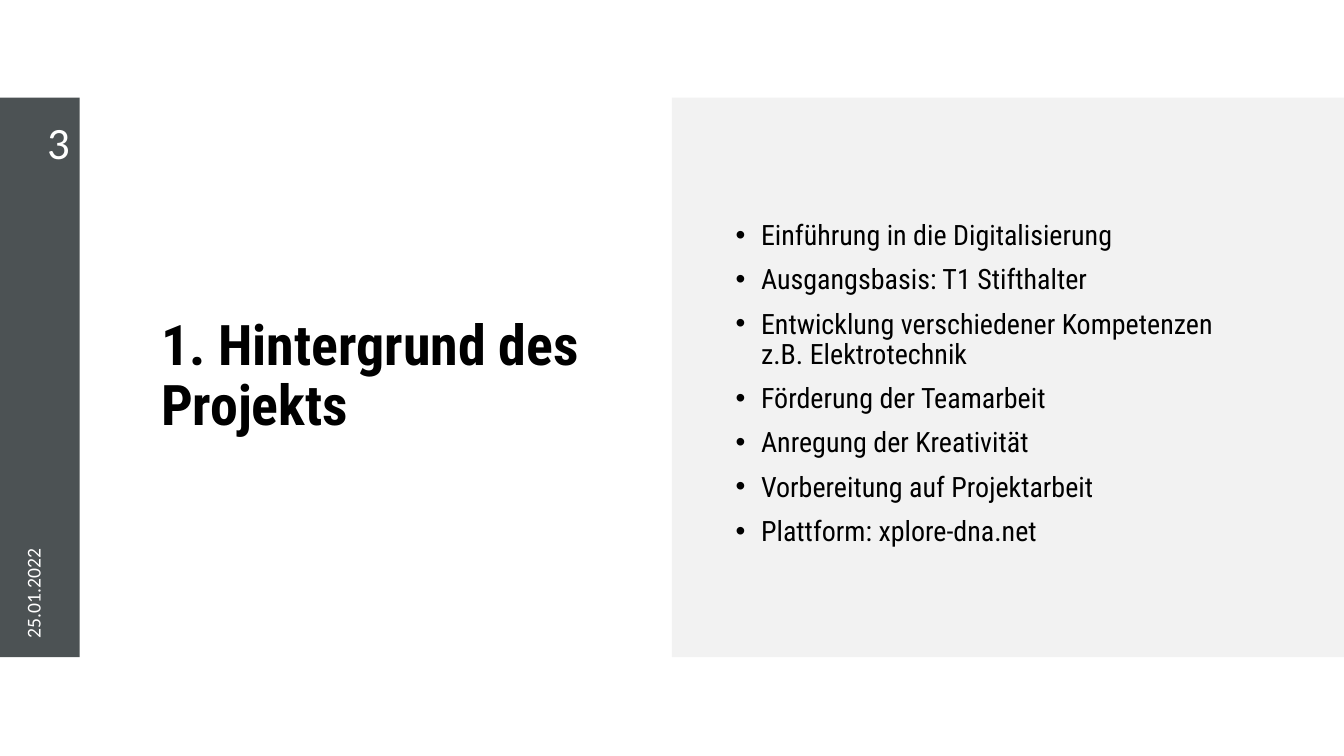
from lxml.etree import SubElement
from pptx import Presentation
from pptx.dml.color import RGBColor
from pptx.enum.shapes import MSO_SHAPE
from pptx.enum.text import MSO_ANCHOR, PP_ALIGN
from pptx.oxml.ns import qn
from pptx.util import Cm, Pt

CONDENSED = "Roboto Condensed"
BAND_TOP, BAND_HEIGHT = 2.46, 14.1
SIDEBAR_WIDTH = 2.01


def color(hex_string):
    return RGBColor.from_string(hex_string)


def add_text(lines, left, top, width, height, size, font="Calibri", fill="FFFFFF",
             bold=False, align=PP_ALIGN.LEFT, anchor=MSO_ANCHOR.MIDDLE,
             line_spacing=1.0, space_before=0, bullet=None, rotation=0):
    """Add a text box with one paragraph per line; lengths are in centimetres."""
    shape = slide.shapes.add_textbox(Cm(left), Cm(top), Cm(width), Cm(height))
    shape.rotation = rotation
    frame = shape.text_frame
    frame.word_wrap = True
    frame.vertical_anchor = anchor
    for index, line in enumerate(lines):
        paragraph = frame.paragraphs[0] if index == 0 else frame.add_paragraph()
        if bullet:
            properties = paragraph._p.get_or_add_pPr()
            properties.set("marL", str(Cm(0.64)))
            properties.set("indent", str(-Cm(0.64)))
            SubElement(properties, qn("a:buFont"), typeface="Arial")
            SubElement(properties, qn("a:buChar"), char=bullet)
        paragraph.alignment = align
        paragraph.line_spacing = line_spacing
        paragraph.space_before = Pt(space_before if index else 0)
        run = paragraph.add_run()
        run.text = line
        run.font.name = font
        run.font.size = Pt(size)
        run.font.bold = bold
        run.font.color.rgb = color(fill)


presentation = Presentation()
presentation.slide_width = Cm(33.87)
presentation.slide_height = Cm(19.05)
slide = presentation.slides.add_slide(presentation.slide_layouts[6])

# Sidebar and content panel: left, width, fill, opacity in percent
for left, width, fill, opacity in [
    (0, SIDEBAR_WIDTH, "4C5254", 100),
    (16.93, 16.94, "808080", 10),
]:
    band = slide.shapes.add_shape(
        MSO_SHAPE.RECTANGLE, Cm(left), Cm(BAND_TOP), Cm(width), Cm(BAND_HEIGHT))
    band.shadow.inherit = False
    band.line.fill.background()
    band.fill.solid()
    band.fill.fore_color.rgb = color(fill)
    if opacity < 100:
        fill_element = band._element.spPr.find(qn("a:solidFill"))
        SubElement(fill_element[0], qn("a:alpha"), val=str(opacity * 1000))

# Sidebar texts
add_text(["3"], 0, 2.72, SIDEBAR_WIDTH, 1.68, 32, align=PP_ALIGN.RIGHT)
add_text(["25.01.2022"], -5.11, 9.98, 11.73, 0.99, 14,
         anchor=MSO_ANCHOR.BOTTOM, rotation=270)

# Title and content
add_text(["1. Hintergrund des Projekts"], 3.81, 3.84, 11.46, 11.35, 40,
         font=CONDENSED, fill="000000", bold=True, line_spacing=0.9)

topics = [
    "Einführung in die Digitalisierung",
    "Ausgangsbasis: T1 Stifthalter",
    "Entwicklung verschiedener Kompetenzen z.B. Elektrotechnik",
    "Förderung der Teamarbeit",
    "Anregung der Kreativität",
    "Vorbereitung auf Projektarbeit",
    "Plattform: xplore-dna.net",
]
add_text(topics, 18.29, 4.01, 13.72, 11.35, 20, font=CONDENSED, fill="000000",
         line_spacing=0.9, space_before=10, bullet="•")

presentation.save("out.pptx")
